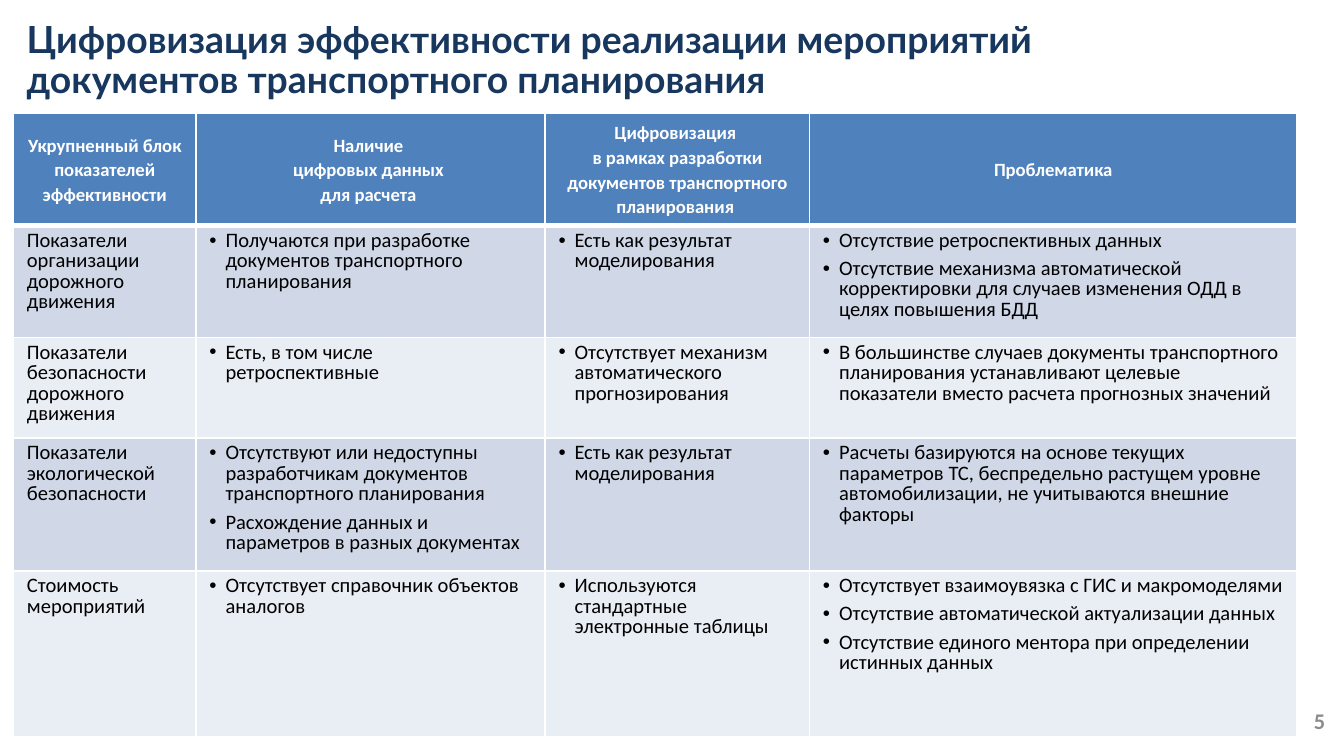
import pptx
import pptx.util
import pptx.dml.color
import pptx.enum.text
import pptx.oxml
import pptx.oxml.ns
import lxml.etree

Pt = pptx.util.Pt
Align = pptx.enum.text.PP_ALIGN
Anchor = pptx.enum.text.MSO_ANCHOR
HUES = {"title": "17375E", "page": "8C8C8C", "head": "4F81BD", "odd": "D0D8E8",
        "even": "E9EDF4", "white": "FFFFFF", "black": "000000"}


def write(frame, lines, size=11, hue="black", bold=False, face="Calibri", align=Align.LEFT,
          space=None, gap=0, dot=False, anchor=Anchor.TOP):
    frame.word_wrap = True
    frame.vertical_anchor = anchor
    for i, line in enumerate(lines):
        para = frame.paragraphs[0] if i == 0 else frame.add_paragraph()
        para.text = line
        if dot:
            props = para._p.get_or_add_pPr()
            props.set("marL", str(pptx.util.Inches(0.12)))
            props.set("indent", str(-pptx.util.Inches(0.12)))
            type_face = lxml.etree.SubElement(props, pptx.oxml.ns.qn("a:buFont"))
            type_face.set("typeface", "Arial")
            mark = lxml.etree.SubElement(props, pptx.oxml.ns.qn("a:buChar"))
            mark.set("char", "•")
        para.alignment = align
        para.line_spacing = space
        para.space_before = Pt(gap if i else 0)
        para.space_after = Pt(gap)
        for run in para.runs:
            font = run.font
            font.size, font.bold, font.name = Pt(size), bold, face
            font.color.rgb = pptx.dml.color.RGBColor.from_string(HUES[hue])


def edge(cell, side, width):
    cell._tc.get_or_add_tcPr().append(pptx.oxml.parse_xml(
        f'<a:ln{side} {pptx.oxml.ns.nsdecls("a")} w="{Pt(width)}"><a:solidFill>'
        f'<a:srgbClr val="{HUES["white"]}"/></a:solidFill></a:ln{side}>'))


deck = pptx.Presentation()
deck.slide_width = pptx.util.Inches(10)
deck.slide_height = deck.slide_width * 9 // 16
col, row = deck.slide_width / 100, deck.slide_height / 100
slide = deck.slides.add_slide(deck.slide_layouts[6])

title = slide.shapes.add_textbox(int(col), int(1.9 * row), int(83.7 * col), int(9.4 * row))
write(title.text_frame,
      ["Цифровизация эффективности реализации мероприятий документов транспортного планирования"],
      size=20, hue="title", bold=True, face="Lato", space=0.9)

page = slide.shapes.add_textbox(int(76.3 * col), int(92.7 * row), int(23.3 * col), int(5.3 * row))
write(page.text_frame, ["5"], size=12, hue="page", bold=True, align=Align.RIGHT,
      anchor=Anchor.MIDDLE)

HEADS = ["Укрупненный блок показателей эффективности",
         "Наличие \nцифровых данных \nдля расчета ",
         "Цифровизация \nв рамках разработки документов транспортного планирования ",
         "Проблематика"]
BODY = [
    [["Показатели организации дорожного движения"],
     ["Получаются при разработке документов транспортного планирования"],
     ["Есть как результат моделирования"],
     ["Отсутствие ретроспективных данных",
      "Отсутствие механизма автоматической корректировки для случаев изменения ОДД "
      "в целях повышения БДД"]],
    [["Показатели безопасности дорожного движения"],
     ["Есть, в том числе ретроспективные"],
     ["Отсутствует механизм автоматического прогнозирования"],
     ["В большинстве случаев документы транспортного планирования устанавливают "
      "целевые показатели вместо расчета прогнозных значений"]],
    [["Показатели экологической безопасности"],
     ["Отсутствуют или недоступны разработчикам документов транспортного планирования",
      "Расхождение данных и параметров в разных документах"],
     ["Есть как результат моделирования"],
     ["Расчеты базируются на основе текущих параметров ТС, беспредельно растущем "
      "уровне автомобилизации, не учитываются внешние факторы"]],
    [["Стоимость мероприятий"],
     ["Отсутствует справочник объектов аналогов"],
     ["Используются стандартные электронные таблицы"],
     ["Отсутствует взаимоувязка с ГИС и макромоделями",
      "Отсутствие автоматической актуализации данных",
      "Отсутствие единого ментора при определении истинных данных"]],
]
WIDTHS = [13.58, 25.98, 19.68, 36.26]
HEIGHTS = [13.5, 14.8, 13.35, 17.6, 21.9]

grid = slide.shapes.add_table(len(HEIGHTS), len(WIDTHS), int(col), int(15 * row),
                              int(sum(WIDTHS) * col), int(sum(HEIGHTS) * row)).table
grid.horz_banding = False
for c, width in enumerate(WIDTHS):
    grid.columns[c].width = int(width * col)
for r, height in enumerate(HEIGHTS):
    grid.rows[r].height = int(height * row)
    tint = "head" if r == 0 else "odd" if r % 2 else "even"
    for c in range(len(WIDTHS)):
        cell = grid.cell(r, c)
        for side in "LRTB":
            thick = (r, side) in [(0, "B"), (1, "T")]
            edge(cell, side, 3 if thick else 1)
        cell.fill.solid()
        cell.fill.fore_color.rgb = pptx.dml.color.RGBColor.from_string(HUES[tint])
        if r == 0:
            write(cell.text_frame, [HEADS[c]], size=10, hue="white", bold=True,
                  align=Align.CENTER, space=Pt(13.2))
            cell.vertical_anchor = Anchor.MIDDLE
        else:
            write(cell.text_frame, BODY[r - 1][c], space=Pt(11), gap=2, dot=c > 0)

deck.save("out.pptx")
